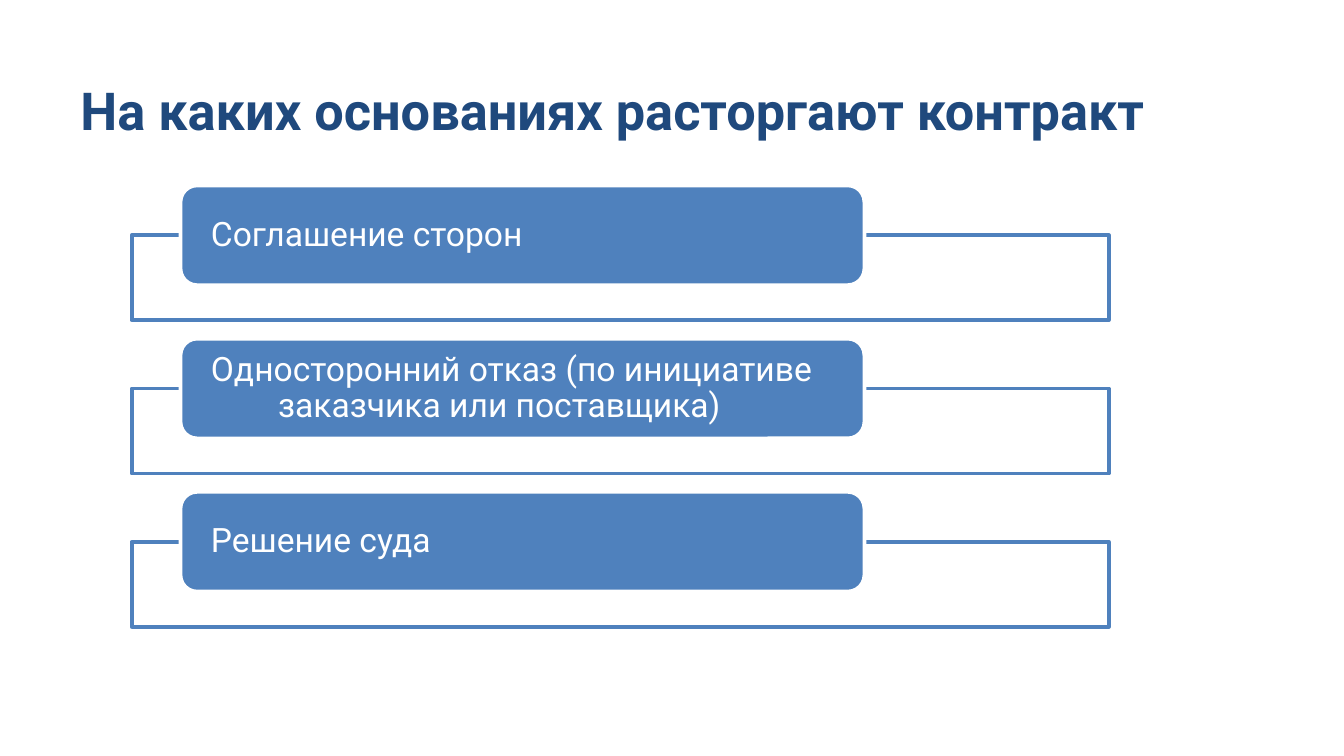
from pptx import Presentation, util as u
from pptx.dml.color import RGBColor
from pptx.enum import shapes, text
from pptx.oxml import parse_xml
from pptx.oxml.ns import nsdecls, qn

WIDE = 10
HIGH = WIDE * 9 / 16
BLUE, NAVY, WHITE = "4F81BD", "1F497D", "FFFFFF"
FONT = "Roboto"
ITEMS = [
    ("Соглашение сторон", 0),
    ("Односторонний отказ (по инициативе заказчика или поставщика)", 0.5),
    ("Решение суда", 0),
]


def color(code):
    return RGBColor.from_string(code)


def write(para, words, size, code, bold=False):
    run = para.add_run()
    run.text = words
    font = run.font
    font.name, font.size, font.bold = FONT, u.Pt(size), bold
    font.color.rgb = color(code)


def panel(slide, kind, box, fill, line):
    item = slide.shapes.add_shape(kind, *map(u.Inches, box))
    item.shadow.inherit = False
    item.fill.solid()
    item.fill.fore_color.rgb = color(fill)
    item.line.color.rgb = color(line)
    item.line.width = u.Pt(2)
    return item


def fade(item, share):
    """Set the opacity of a solid fill, in percent."""
    tint = item.fill._xPr.find(qn("a:solidFill"))[0]
    tint.append(parse_xml(f'<a:alpha {nsdecls("a")} val="{share * 1000}"/>'))


def title(slide, box, words):
    frame = slide.shapes.add_textbox(*map(u.Inches, box)).text_frame
    frame.word_wrap = True
    frame.vertical_anchor = text.MSO_ANCHOR.MIDDLE
    write(frame.paragraphs[0], words, 28, NAVY, True)


def entry(slide, box, words, hang):
    """Draw a framed row with a label pill over its top edge."""
    left, top, wide, high = box
    drop, inset = high * 0.37, wide * 0.05
    frame = panel(slide, shapes.MSO_SHAPE.RECTANGLE,
                  (left, top + drop, wide, high - drop), WHITE, BLUE)
    fade(frame, 90)
    pill = panel(slide, shapes.MSO_SHAPE.ROUNDED_RECTANGLE,
                 (left + inset, top, wide * 0.7, drop * 2), BLUE, WHITE)
    body = pill.text_frame
    body.word_wrap = True
    body.vertical_anchor = text.MSO_ANCHOR.MIDDLE
    body.margin_left = body.margin_right = u.Inches(0.19)
    body.margin_top = body.margin_bottom = 0
    para = body.paragraphs[0]
    para.alignment = text.PP_ALIGN.LEFT
    para.line_spacing = 0.9
    if hang:
        props = para._p.get_or_add_pPr()
        props.set("marL", str(u.Inches(hang)))
        props.set("indent", str(-u.Inches(hang)))
    write(para, words, 18, WHITE)


def stack(slide, box, items):
    left, top, wide, high = box
    step = high / len(items)
    for row, (words, hang) in enumerate(items):
        entry(slide, (left, top + row * step, wide, step * 0.88), words, hang)


def main():
    deck = Presentation()
    deck.slide_width, deck.slide_height = u.Inches(WIDE), u.Inches(HIGH)
    slide = deck.slides.add_slide(deck.slide_layouts[6])
    title(slide, (WIDE * 0.05, HIGH * 0.08, WIDE * 0.9, HIGH * 0.13),
          "На каких основаниях расторгают контракт")
    stack(slide, (0.98, 1.38, 7.27, 3.42), ITEMS)
    deck.save("out.pptx")


if __name__ == "__main__":
    main()
